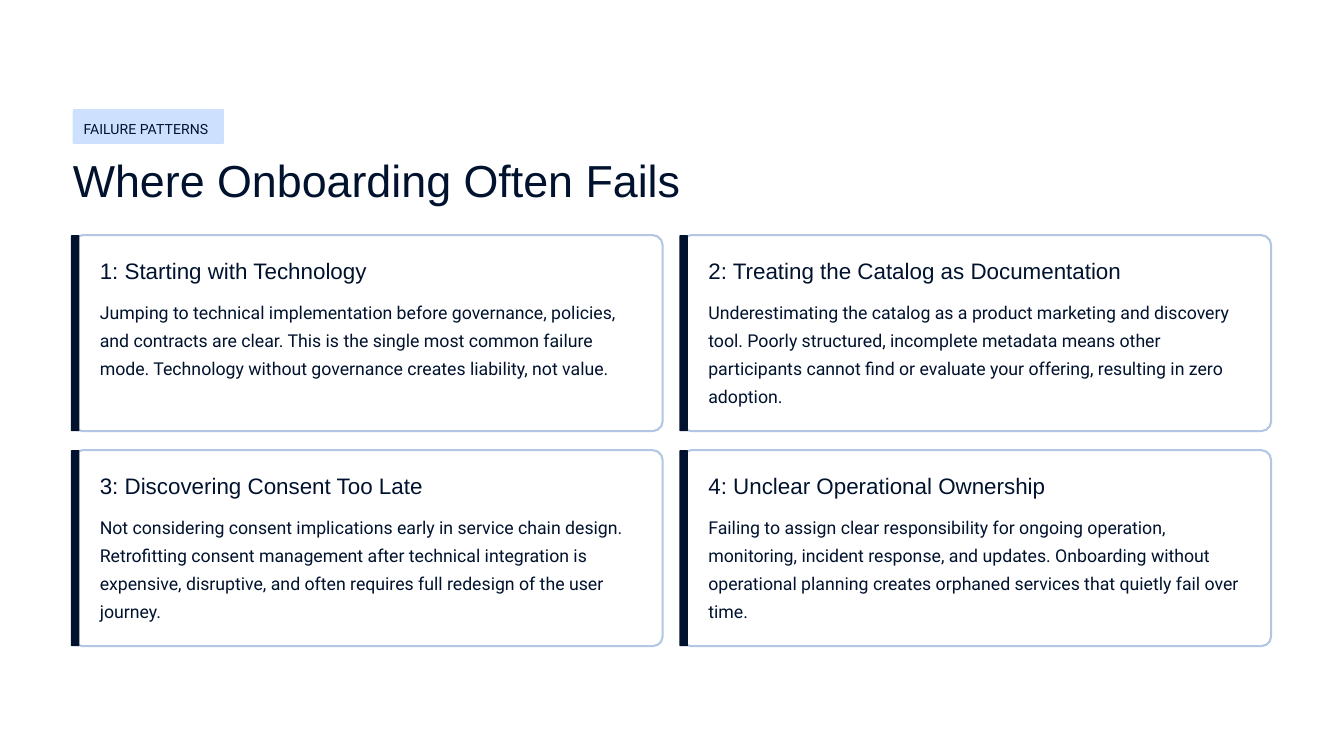
from pptx import Presentation
from pptx.dml.color import RGBColor
from pptx.enum.shapes import MSO_SHAPE
from pptx.enum.text import MSO_ANCHOR, PP_ALIGN
from pptx.util import Pt

NAVY = RGBColor(0x01, 0x12, 0x2E)
SKY = RGBColor(0xCD, 0xE0, 0xFE)
EDGE = RGBColor(0xB3, 0xC6, 0xE4)
WHITE = RGBColor(0xFF, 0xFF, 0xFF)

TAG = "FAILURE PATTERNS"
TITLE = "Where Onboarding Often Fails"
CARDS = [
    ("1: Starting with Technology",
     "Jumping to technical implementation before governance, policies, and "
     "contracts are clear. This is the single most common failure mode. "
     "Technology without governance creates liability, not value."),
    ("2: Treating the Catalog as Documentation",
     "Underestimating the catalog as a product marketing and discovery tool. "
     "Poorly structured, incomplete metadata means other participants cannot "
     "find or evaluate your offering, resulting in zero adoption."),
    ("3: Discovering Consent Too Late",
     "Not considering consent implications early in service chain design. "
     "Retrofitting consent management after technical integration is "
     "expensive, disruptive, and often requires full redesign of the user "
     "journey."),
    ("4: Unclear Operational Ownership",
     "Failing to assign clear responsibility for ongoing operation, "
     "monitoring, incident response, and updates. Onboarding without "
     "operational planning creates orphaned services that quietly fail over "
     "time."),
]

LEFT, TOP = 39, 126
CARD_W, CARD_H = 316, 105
STEP_X, STEP_Y = 326, 115.2
TEXT_W = 291


def place(shape, x, y, w, h):
    shape.left, shape.top, shape.width, shape.height = map(Pt, (x, y, w, h))


def write(shape, text, size, face, space):
    frame = shape.text_frame
    frame.margin_left = frame.margin_right = 0
    frame.margin_top = frame.margin_bottom = 0
    frame.word_wrap = True
    frame.vertical_anchor = MSO_ANCHOR.TOP
    para = frame.paragraphs[0]
    para.text = text
    para.alignment = PP_ALIGN.LEFT
    para.line_spacing = space
    para.font.size = Pt(size)
    para.font.name = face
    para.font.color.rgb = NAVY


def add_text(x, y, w, h, *style):
    write(shapes.add_textbox(Pt(x), Pt(y), Pt(w), Pt(h)), *style)


def add_box(x, y, w, h, curve, fill, edge=None):
    box = shapes.add_shape(MSO_SHAPE.ROUNDED_RECTANGLE,
                           Pt(x), Pt(y), Pt(w), Pt(h))
    box.adjustments[0] = curve
    box.shadow.inherit = False
    box.fill.solid()
    box.fill.fore_color.rgb = fill
    if edge is None:
        box.line.fill.background()
    else:
        box.line.color.rgb = edge
        box.line.width = Pt(1.12)


deck = Presentation()
deck.slide_width, deck.slide_height = Pt(720), Pt(405)
slide = deck.slides.add_slide(deck.slide_layouts[5])
slide.background.fill.solid()
slide.background.fill.fore_color.rgb = WHITE
shapes = slide.shapes

add_box(LEFT, 58.5, 81, 18.5, 0.03, SKY)
add_text(44.8, 61.5, 105, 12, TAG, 7.5, "Roboto", 1.33)
place(shapes.title, LEFT, 80.6, 378, 30)
write(shapes.title, TITLE, 24, "Arial", 1.04)

for i, (head, body) in enumerate(CARDS):
    row, col = divmod(i, 2)
    x, y = LEFT + col * STEP_X, TOP + row * STEP_Y
    add_box(x, y, CARD_W, CARD_H, 0.05, WHITE, EDGE)
    add_box(x - 1, y, 4.5, CARD_H, 0.1, NAVY)
    add_text(x + 14.5, y + 11, TEXT_W, 15, head, 12, "Arial", 1.04)
    add_text(x + 14.5, y + 31.7, TEXT_W, 62.5, body, 9.5, "Roboto", 1.33)

deck.save("out.pptx")
